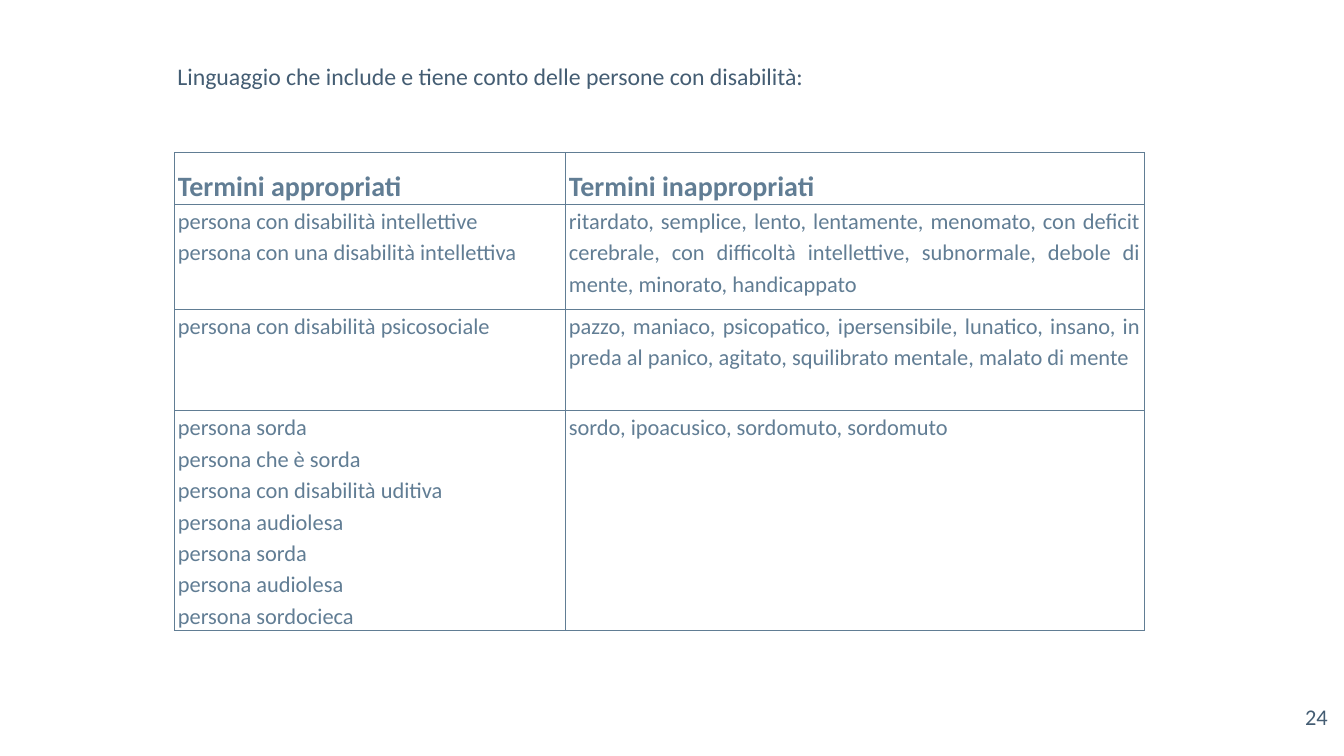
from lxml import etree
from pptx import Presentation
from pptx.dml.color import RGBColor
from pptx.enum.text import MSO_ANCHOR, PP_ALIGN
from pptx.oxml.ns import qn
from pptx.util import Inches, Pt

LEFT, RIGHT, JUSTIFY = PP_ALIGN.LEFT, PP_ALIGN.RIGHT, PP_ALIGN.JUSTIFY
TOP = MSO_ANCHOR.TOP

# Content
TITLE = "Linguaggio che include e tiene conto delle persone con disabilità:"
PAGE_NUMBER = "24"
HEADINGS = (["Termini appropriati"], ["Termini inappropriati"])
TERMS = [
    (["persona con disabilità intellettive",
      "persona con una disabilità intellettiva"],
     ["ritardato, semplice, lento, lentamente, menomato, con deficit cerebrale, "
      "con difficoltà intellettive, subnormale, debole di mente, minorato, "
      "handicappato"]),
    (["persona con disabilità psicosociale"],
     ["pazzo, maniaco, psicopatico, ipersensibile, lunatico, insano, in preda "
      "al panico, agitato, squilibrato mentale, malato di mente"]),
    (["persona sorda", "persona che è sorda", "persona con disabilità uditiva",
      "persona audiolesa", "persona sorda", "persona audiolesa",
      "persona sordocieca"],
     ["sordo, ipoacusico, sordomuto, sordomuto"]),
]

# Layout in inches
SLIDE_WIDTH, SLIDE_HEIGHT = 26.67, 15
MARGIN_LEFT, TABLE_TOP = 3.46, 3.03
COLUMN_WIDTHS = (7.76, 11.48)
ROW_HEIGHTS = (1.02, 2.08, 2.01, 4.37)
FONT, TEXT_COLOR, TABLE_COLOR = "Calibri", "445D73", "617D94"


def color(value):
    return RGBColor.from_string(value)


def write_text(frame, lines, size=32, fill=TEXT_COLOR, bold=False,
               align=LEFT, spacing=1.0):
    frame.word_wrap = True
    for index, line in enumerate(lines):
        paragraph = frame.paragraphs[0] if index == 0 else frame.add_paragraph()
        paragraph.alignment = align
        paragraph.line_spacing = spacing
        run = paragraph.add_run()
        run.text = line
        run.font.name, run.font.size, run.font.bold = FONT, Pt(size), bold
        run.font.color.rgb = color(fill)


def add_text(slide, box, insets, lines, **text_format):
    frame = slide.shapes.add_textbox(*map(Inches, box)).text_frame
    frame.margin_left = frame.margin_right = Inches(insets[0])
    frame.margin_top = frame.margin_bottom = Inches(insets[1])
    frame.vertical_anchor = TOP
    write_text(frame, lines, **text_format)


def style_cell(cell):
    cell.margin_left = cell.margin_right = Inches(0.07)
    cell.margin_top = cell.margin_bottom = 0
    cell.vertical_anchor = TOP
    properties = cell._tc.get_or_add_tcPr()
    for side in ("a:lnL", "a:lnR", "a:lnT", "a:lnB"):
        line = etree.SubElement(properties, qn(side), w=str(Pt(1)))
        fill = etree.SubElement(line, qn("a:solidFill"))
        etree.SubElement(fill, qn("a:srgbClr"), val=TABLE_COLOR)
    cell.fill.background()


def add_terms_table(slide):
    rows = [HEADINGS] + TERMS
    table = slide.shapes.add_table(
        len(rows), len(COLUMN_WIDTHS), Inches(MARGIN_LEFT), Inches(TABLE_TOP),
        Inches(sum(COLUMN_WIDTHS)), Inches(sum(ROW_HEIGHTS))).table
    table.horz_banding = False
    for column, width in zip(table.columns, COLUMN_WIDTHS):
        column.width = Inches(width)
    for row, height in zip(table.rows, ROW_HEIGHTS):
        row.height = Inches(height)
    for row_index, row in enumerate(rows):
        heading = row_index == 0
        for column_index, lines in enumerate(row):
            cell = table.cell(row_index, column_index)
            style_cell(cell)
            write_text(cell.text_frame, lines, size=40 if heading else 32,
                       fill=TABLE_COLOR, bold=heading,
                       align=JUSTIFY if len(lines) == 1 else LEFT,
                       spacing=1.5 if heading else 1.15)


def main():
    presentation = Presentation()
    presentation.slide_width = Inches(SLIDE_WIDTH)
    presentation.slide_height = Inches(SLIDE_HEIGHT)
    slide = presentation.slides.add_slide(presentation.slide_layouts[6])

    # Terms, title and page number
    add_terms_table(slide)
    add_text(slide, (MARGIN_LEFT, 1.07, 21.75, 0.82), (0.06, 0.06), [TITLE],
             size=34, spacing=1.15)
    add_text(slide, (24.95, 13.85, 1.6, 1.15), (0.2, 0.1), [PAGE_NUMBER],
             align=RIGHT)
    presentation.save("out.pptx")


if __name__ == "__main__":
    main()
